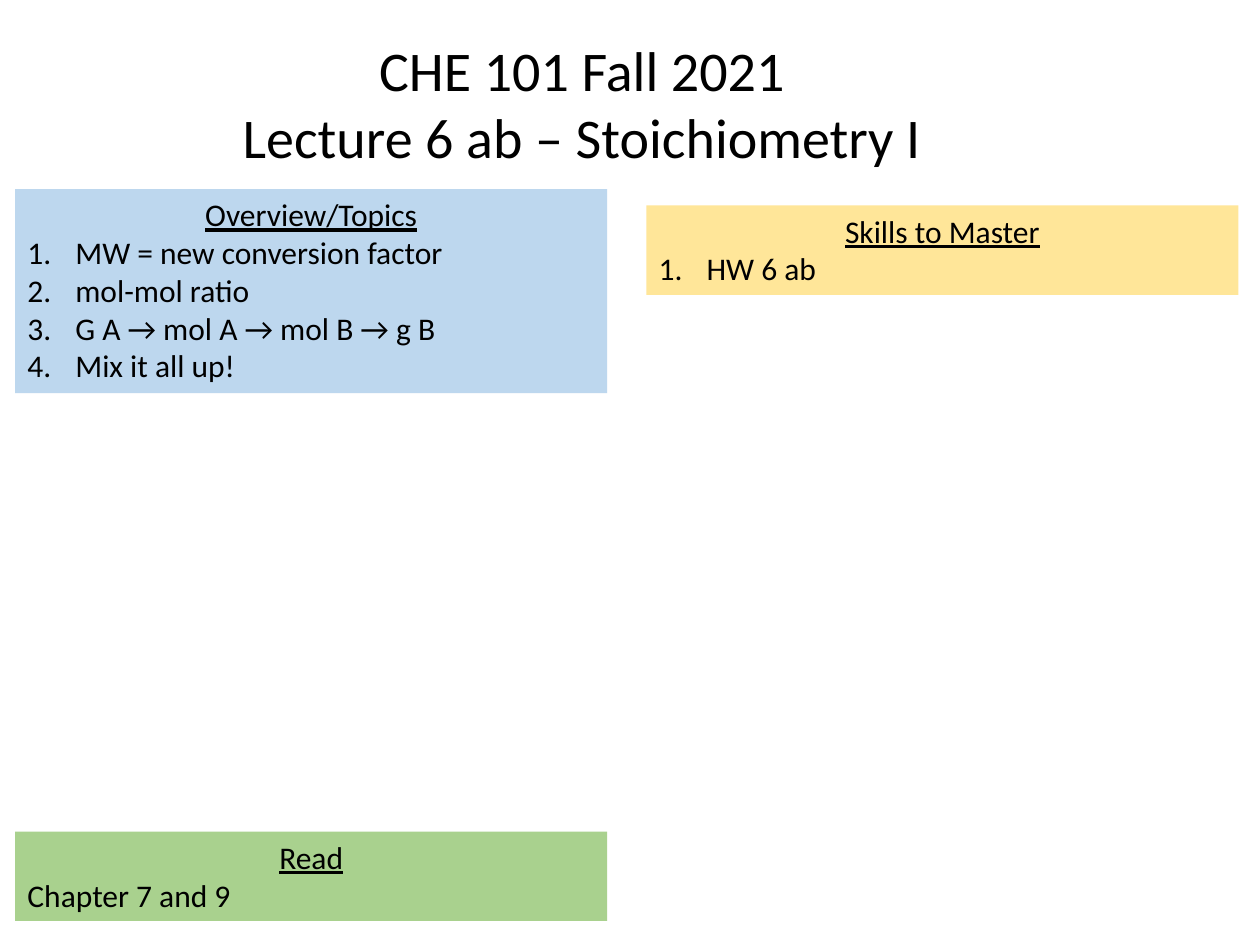
from lxml import etree
from pptx import Presentation
from pptx.dml.color import RGBColor
from pptx.enum.text import MSO_ANCHOR, MSO_AUTO_SIZE, PP_ALIGN
from pptx.oxml.ns import qn
from pptx.util import Inches, Pt

CENTER, LEFT = PP_ALIGN.CENTER, PP_ALIGN.LEFT
TOP = MSO_ANCHOR.TOP
GROW = MSO_AUTO_SIZE.SHAPE_TO_FIT_TEXT

BLACK = RGBColor(0x00, 0x00, 0x00)
BLUE = RGBColor(0xBD, 0xD7, 0xEE)
YELLOW = RGBColor(0xFF, 0xE6, 0x99)
GREEN = RGBColor(0xA9, 0xD1, 0x8E)

FONT = "Calibri"
CARD_W = 4.7
INDENT = Inches(0.38)


def write_lines(tf, lines):
    for i, (text, size, align, underline, numbered) in enumerate(lines):
        p = tf.paragraphs[0] if i == 0 else tf.add_paragraph()
        p.alignment = align
        r = p.add_run()
        r.text = text
        r.font.name = FONT
        r.font.size = Pt(size)
        r.font.color.rgb = BLACK
        r.font.underline = underline
        if numbered:
            pPr = p._p.get_or_add_pPr()
            pPr.set("marL", str(INDENT))
            pPr.set("indent", str(-INDENT))
            etree.SubElement(pPr, qn("a:buFont"), typeface="+mj-lt")
            etree.SubElement(pPr, qn("a:buAutoNum"), type="arabicPeriod")


def add_title(s, x, y, w, h, lines):
    sp = s.shapes.add_textbox(Inches(x), Inches(y), Inches(w), Inches(h))
    tf = sp.text_frame
    tf.word_wrap = False
    tf.auto_size = GROW
    write_lines(tf, [(text, 32, CENTER, False, False) for text in lines])


def add_card(s, x, y, w, h, fill, heading, items, numbered=True):
    sp = s.shapes.add_textbox(Inches(x), Inches(y), Inches(w), Inches(h))
    sp.fill.solid()
    sp.fill.fore_color.rgb = fill
    tf = sp.text_frame
    tf.word_wrap = True
    tf.auto_size = GROW
    tf.vertical_anchor = TOP
    body = [(text, 18, LEFT, False, numbered) for text in items]
    write_lines(tf, [(heading, 18, CENTER, True, False)] + body)


def main():
    prs = Presentation()
    prs.slide_width, prs.slide_height = Inches(10), Inches(7.5)
    s = prs.slides.add_slide(prs.slide_layouts[6])
    add_card(s, 0.12, 1.5, CARD_W, 1.62, BLUE, "Overview/Topics", [
        "MW = new conversion factor",
        "mol-mol ratio",
        "G A → mol A → mol B → g B",
        "Mix it all up!",
    ])
    add_card(s, 5.13, 1.63, CARD_W, 0.71, YELLOW, "Skills to Master",
             ["HW 6 ab"])
    add_card(s, 0.12, 6.6, CARD_W, 0.71, GREEN, "Read",
             ["Chapter 7 and 9"], numbered=False)
    add_title(s, 1.8, 0.23, 5.64, 1.18,
              ["CHE 101 Fall 2021", "Lecture 6 ab – Stoichiometry I"])
    prs.save("out.pptx")


if __name__ == "__main__":
    main()
